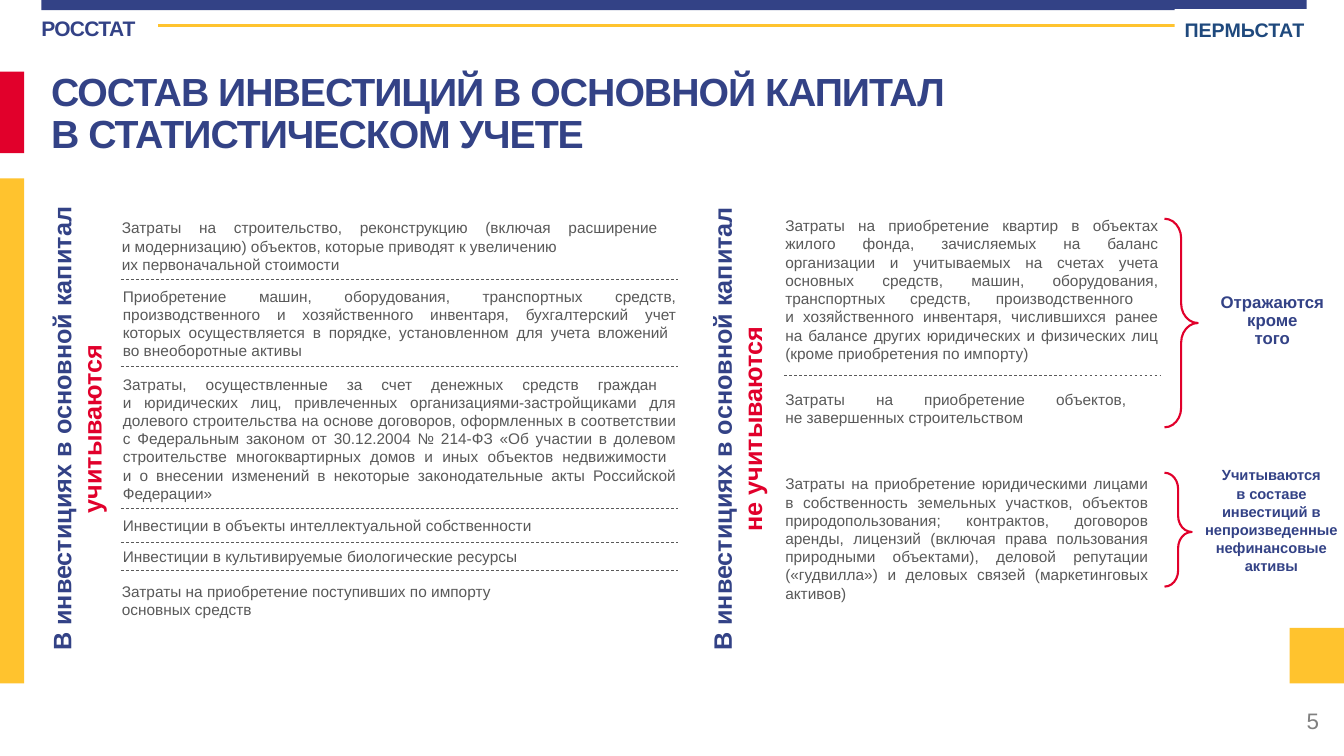
from dataclasses import dataclass
from typing import Optional

from lxml.etree import SubElement
from pptx import Presentation
from pptx.dml.color import RGBColor
from pptx.enum.dml import MSO_LINE
from pptx.enum.shapes import MSO_CONNECTOR as Connector, MSO_SHAPE as Shape
from pptx.enum.text import MSO_ANCHOR as Anchor, PP_ALIGN as Align
from pptx.oxml.ns import qn
from pptx.util import Inches, Pt

BLUE = RGBColor(0x33, 0x42, 0x86)
NAVY = RGBColor(0x1F, 0x49, 0x7D)
RED = RGBColor(0xE1, 0x00, 0x2B)
YELLOW = RGBColor(0xFF, 0xC3, 0x2E)
WHITE = RGBColor(0xFF, 0xFF, 0xFF)
GRAY = RGBColor(0x59, 0x59, 0x59)
LIGHT_GRAY = RGBColor(0x80, 0x80, 0x80)

FONT = "Arial"
SLIDE_WIDTH = Inches(13.33)
SLIDE_HEIGHT = Inches(7.5)
GRID_ROWS = 75
CELL = SLIDE_HEIGHT / GRID_ROWS
TEXT_LEADING = Pt(13)


@dataclass(frozen=True)
class Area:
    column: float
    row: float
    columns: float
    rows: float

    def box(self) -> tuple[int, ...]:
        return tuple(cells(n) for n in (self.column, self.row, self.columns, self.rows))


@dataclass(frozen=True)
class Block:
    area: Area
    text: str


@dataclass(frozen=True)
class Divider:
    start: float
    end: float
    row: float


@dataclass(frozen=True)
class Heading:
    column: float
    text: str
    accent: str


@dataclass(frozen=True)
class Note:
    brace: Area
    adjustments: tuple[float, float]
    label: Block
    size: float


BANDS = [
    (Area(4.1, 0, 125.5, 1), BLUE),
    (Area(0, 7.1, 2.4, 8.1), RED),
    (Area(0, 17.7, 2.4, 50.1), YELLOW),
    (Area(127.9, 62.3, 5.4, 5.5), YELLOW),
]

HEADINGS = [
    Heading(-21.1, "В инвестициях в основной капитал ", "учитываются"),
    Heading(44.4, "В инвестициях в основной капитал\v", "не учитываются"),
]

BLOCKS = [
    Block(Area(11.1, 21.2, 56.9, 6.5),
          "Затраты на строительство, реконструкцию (включая расширение \v"
          "и модернизацию) объектов, которые приводят к увеличению\n"
          "их первоначальной стоимости"),
    Block(Area(11.2, 28, 56.9, 8.3),
          "Приобретение машин, оборудования, транспортных средств, производственного "
          "и хозяйственного инвентаря, бухгалтерский учет которых осуществляется "
          "в порядке, установленном для учета вложений \vво внеоборотные активы"),
    Block(Area(11.2, 36.7, 56.9, 13.8),
          "Затраты, осуществленные за счет денежных средств граждан \v"
          "и юридических лиц, привлеченных организациями-застройщиками для долевого "
          "строительства на основе договоров, оформленных в соответствии с Федеральным "
          "законом от 30.12.2004 № 214-ФЗ «Об участии в долевом строительстве "
          "многоквартирных домов и иных объектов недвижимости \v"
          "и о внесении изменений в некоторые законодательные акты Российской Федерации»"),
    Block(Area(11.2, 50.7, 66.7, 2.8), "Инвестиции в объекты интеллектуальной собственности"),
    Block(Area(11.2, 53.8, 66.7, 2.8), "Инвестиции в культивируемые биологические ресурсы"),
    Block(Area(11.1, 57.3, 66.7, 4.7),
          "Затраты на приобретение поступивших по импорту\nосновных средств"),
    Block(Area(76.9, 21, 39, 15.6),
          "Затраты на приобретение квартир в объектах жилого фонда, зачисляемых на баланс "
          "организации и учитываемых на счетах учета основных средств, машин, "
          "оборудования, транспортных средств, производственного \v"
          "и хозяйственного инвентаря, числившихся ранее на балансе других юридических "
          "и физических лиц (кроме приобретения по импорту)"),
    Block(Area(76.9, 38.2, 38.9, 4.7),
          "Затраты на приобретение объектов, \vне завершенных строительством"),
    Block(Area(76.9, 46.6, 38, 13.8),
          "Затраты на приобретение юридическими лицами в собственность земельных участков, "
          "объектов природопользования; контрактов, договоров аренды, лицензий (включая "
          "права пользования природными объектами), деловой репутации («гудвилла») "
          "и деловых связей (маркетинговых активов)"),
]

DIVIDERS = [Divider(12, 67.2, row) for row in (27.7, 36.3, 50.4, 53.8, 56.6)]
DIVIDERS.append(Divider(77.8, 115.2, 37.2))

NOTES = [
    Note(Area(115.5, 21.7, 3.3, 20.7), (0.59, 0.5),
         Block(Area(120, 28.6, 12.4, 6.5), "Отражаются\vкроме\vтого"), 12),
    Note(Area(115.5, 46.9, 2.7, 11.3), (0.59, 0.52),
         Block(Area(118.2, 45.7, 15.8, 12),
               "Учитываются\vв составе инвестиций в непроизведенные нефинансовые активы"), 10.5),
]


def cells(count: float) -> int:
    return round(count * CELL)


def add_shape(slide, kind: Shape, area: Area, fill: Optional[RGBColor] = None,
              line: Optional[RGBColor] = None, width: float = 1.5):
    shape = slide.shapes.add_shape(kind, *area.box())
    shape.shadow.inherit = False
    if fill is None:
        shape.fill.background()
    else:
        shape.fill.solid()
        shape.fill.fore_color.rgb = fill
    if line is None:
        shape.line.fill.background()
    else:
        shape.line.color.rgb = line
        shape.line.width = Pt(width)
    return shape


def add_line(slide, divider: Divider, color: RGBColor, width: float, dashed: bool = False) -> None:
    row = cells(divider.row)
    line = slide.shapes.add_connector(
        Connector.STRAIGHT, cells(divider.start), row, cells(divider.end), row)
    line.line.color.rgb = color
    line.line.width = Pt(width)
    if dashed:
        line.line.dash_style = MSO_LINE.DASH
    SubElement(line._element.spPr, qn("a:effectLst"))


def add_run(paragraph, text: str, size: float, color: RGBColor, bold: bool, tracking: int) -> None:
    run = paragraph.add_run()
    run.text = text
    run.font.name = FONT
    run.font.size = Pt(size)
    run.font.bold = bold
    run.font.color.rgb = color
    if tracking:
        run._r.get_or_add_rPr().set("spc", str(tracking))


def add_text(slide, area: Area, text: str, *, size: float, color: RGBColor, bold: bool = False,
             align: Align = Align.LEFT, leading=None, tracking: int = 0, rotation: float = 0,
             anchor: Anchor = Anchor.TOP, accent: str = "", inset: bool = True) -> None:
    shape = slide.shapes.add_textbox(*area.box())
    shape.rotation = rotation
    frame = shape.text_frame
    frame.word_wrap = True
    frame.vertical_anchor = anchor
    if not inset:
        frame.margin_left = frame.margin_right = frame.margin_top = frame.margin_bottom = 0
    for index, content in enumerate(text.split("\n")):
        paragraph = frame.add_paragraph() if index else frame.paragraphs[0]
        paragraph.alignment = align
        if leading is not None:
            paragraph.line_spacing = leading
        for position, line in enumerate(content.split("\v")):
            if position:
                paragraph.add_line_break()
            if line:
                add_run(paragraph, line, size, color, bold, tracking)
    if accent:
        add_run(paragraph, accent, size, RED, bold, tracking)


def build_slide(slide) -> None:
    for area, color in BANDS:
        add_shape(slide, Shape.RECTANGLE, area, fill=color)
    add_line(slide, Divider(15.7, 129.5, 2.5), YELLOW, 2)
    region = Area(116.5, 0.9, 15.3, 3.4)
    add_shape(slide, Shape.RECTANGLE, region, fill=WHITE)
    add_text(slide, region, "ПЕРМЬСТАТ", size=14, color=NAVY, bold=True, leading=1.15)
    add_text(slide, Area(4.1, 1.5, 11.5, 3.2), "РОССТАТ", size=15, color=BLUE, bold=True,
             tracking=-50, inset=False)
    add_text(slide, Area(4.1, 6.7, 120, 5.5),
             "СОСТАВ ИНВЕСТИЦИЙ В ОСНОВНОЙ КАПИТАЛ\vВ СТАТИСТИЧЕСКОМ УЧЕТЕ",
             size=28, color=BLUE, bold=True, leading=0.9, tracking=-70)
    add_text(slide, Area(101.8, 69.5, 30, 4), "5", size=16, color=LIGHT_GRAY,
             align=Align.RIGHT, anchor=Anchor.MIDDLE)
    for heading in HEADINGS:
        add_text(slide, Area(heading.column, 39, 57.5, 7.1), heading.text, accent=heading.accent,
                 size=18, color=BLUE, bold=True, align=Align.CENTER, rotation=270)
    for block in BLOCKS:
        add_text(slide, block.area, block.text, size=11, color=GRAY,
                 align=Align.JUSTIFY, leading=TEXT_LEADING)
    for divider in DIVIDERS:
        add_line(slide, divider, GRAY, 0.5, dashed=True)
    for note in NOTES:
        brace = add_shape(slide, Shape.RIGHT_BRACE, note.brace, line=RED)
        brace.adjustments[0], brace.adjustments[1] = note.adjustments
        add_text(slide, note.label.area, note.label.text, size=note.size, color=BLUE, bold=True,
                 align=Align.CENTER, leading=TEXT_LEADING)


def main() -> None:
    presentation = Presentation()
    presentation.slide_width = SLIDE_WIDTH
    presentation.slide_height = SLIDE_HEIGHT
    build_slide(presentation.slides.add_slide(presentation.slide_layouts[6]))
    presentation.save("out.pptx")


if __name__ == "__main__":
    main()
